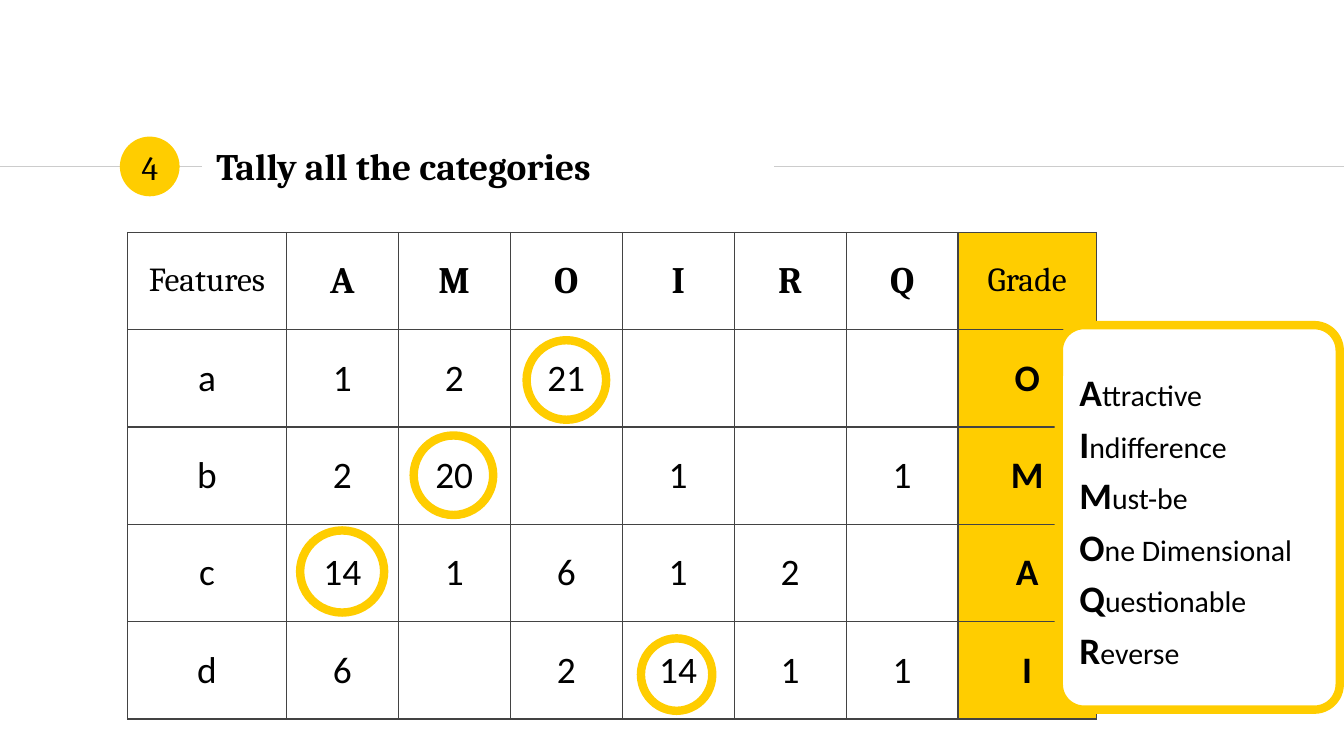
from lxml import etree
from pptx import Presentation
from pptx.dml.color import RGBColor
from pptx.enum.shapes import MSO_CONNECTOR, MSO_SHAPE
from pptx.enum.text import MSO_ANCHOR, PP_ALIGN
from pptx.oxml.ns import qn
from pptx.util import Pt

OVAL, ROUNDED = MSO_SHAPE.OVAL, MSO_SHAPE.ROUNDED_RECTANGLE
STRAIGHT = MSO_CONNECTOR.STRAIGHT
LEFT, CENTER, MIDDLE = PP_ALIGN.LEFT, PP_ALIGN.CENTER, MSO_ANCHOR.MIDDLE

TITLE_ONLY = 5
YELLOW, WHITE, BLACK = "FFCD00", "FFFFFF", "000000"
RULE_GRAY, BORDER_GRAY = "CCCCCC", "434343"
SERIF, SANS = "Cambria", "Calibri"
RULE_Y = 89.3
COLUMN_WIDTHS = [85] + [60] * 6 + [74]
ROW_HEIGHT = 52.15

TALLY = [
    ["Features", "A", "M", "O", "I", "R", "Q", "Grade"],
    ["a", "1", "2", "21", "", "", "", "O"],
    ["b", "2", "20", "", "1", "", "1", "M"],
    ["c", "14", "1", "6", "1", "2", "", "A"],
    ["d", "6", "", "2", "14", "1", "1", "I"],
]
HIGHEST_COUNT_RINGS = [
    (221.6, 233.3, 42.6, 42.6),
    (160.8, 284.2, 45, 44),
    (343.4, 342, 38.2, 38.8),
    (282.1, 182.3, 42.6, 42.6),
]
CATEGORIES = ["Attractive", "Indifference", "Must-be",
              "One Dimensional", "Questionable", "Reverse"]


def color(hex_code):
    return RGBColor.from_string(hex_code)


def points(*lengths):
    return [Pt(length) for length in lengths]


def format_span(span, size, font, bold=False):
    span.font.size = Pt(size)
    span.font.name = font
    span.font.bold = bold
    span.font.color.rgb = color(BLACK)


def set_margins(frame, inset=7.2):
    frame.margin_left = frame.margin_right = Pt(inset)
    frame.margin_top = frame.margin_bottom = Pt(inset)
    frame.vertical_anchor = MIDDLE
    frame.word_wrap = True


def write(frame, text, size, font, bold=False, align=LEFT):
    frame.text = text
    para = frame.paragraphs[0]
    para.alignment = align
    for span in para.runs:
        format_span(span, size, font, bold)


def add_rule(page, start, end):
    rule = page.shapes.add_connector(STRAIGHT, *points(start, RULE_Y, end, RULE_Y))
    rule.line.color.rgb = color(RULE_GRAY)
    rule.line.width = Pt(0.75)
    etree.SubElement(rule._element.spPr, qn("a:effectLst"))


def add_figure(page, preset, area, fill=None, outline=None):
    figure = page.shapes.add_shape(preset, *points(*area))
    figure.shadow.inherit = False
    if fill:
        figure.fill.solid()
        figure.fill.fore_color.rgb = color(fill)
    else:
        figure.fill.background()
    if outline:
        figure.line.color.rgb = color(outline)
        figure.line.width = Pt(4.5)
    else:
        figure.line.fill.background()
    return figure


def add_title(page, text):
    title = page.shapes.title
    title.left, title.top, title.width, title.height = points(108.7, 71.5, 305.3, 34.6)
    set_margins(title.text_frame)
    write(title.text_frame, text, 20, SERIF, bold=True)


def add_step_number(page, text):
    box = page.shapes.add_textbox(*points(65.5, 74.2, 29.5, 31))
    set_margins(box.text_frame)
    write(box.text_frame, text, 18, SERIF, align=CENTER)


def add_borders(cell):
    properties = cell._tc.get_or_add_tcPr()
    for side in ("lnL", "lnR", "lnT", "lnB"):
        border = etree.SubElement(properties, qn("a:" + side), w=str(Pt(0.75)))
        fill = etree.SubElement(border, qn("a:solidFill"))
        etree.SubElement(fill, qn("a:srgbClr"), val=BORDER_GRAY)


def format_cell(cell, text, is_header, is_label, is_grade):
    cell.vertical_anchor = MIDDLE
    cell.margin_left = cell.margin_right = Pt(7.2)
    cell.margin_top = cell.margin_bottom = Pt(5)
    add_borders(cell)
    if is_grade:
        cell.fill.solid()
        cell.fill.fore_color.rgb = color(YELLOW)
    else:
        cell.fill.background()
    is_caption = is_header and (is_label or is_grade)
    write(cell.text_frame, text,
          size=18 if is_caption else 20,
          font=SERIF if is_header else SANS,
          bold=is_header != is_grade and not is_caption,
          align=CENTER)


def add_tally_table(page):
    area = points(68.4, 124.5, sum(COLUMN_WIDTHS), ROW_HEIGHT * len(TALLY))
    table = page.shapes.add_table(len(TALLY), len(COLUMN_WIDTHS), *area).table
    table.first_row = table.horz_banding = False
    for column, width in zip(table.columns, COLUMN_WIDTHS):
        column.width = Pt(width)
    last = len(COLUMN_WIDTHS) - 1
    for r, values in enumerate(TALLY):
        table.rows[r].height = Pt(ROW_HEIGHT)
        for c, value in enumerate(values):
            format_cell(table.cell(r, c), value, r == 0, c == 0, c == last)


def add_legend(page):
    """Card that spells out each category, its initial larger and bold."""
    card = add_figure(page, ROUNDED, (567.2, 174.2, 150.5, 206), WHITE, YELLOW)
    card.adjustments[0] = 0.09
    frame = card.text_frame
    set_margins(frame)
    frame.text = "\n".join(CATEGORIES)
    for para, name in zip(frame.paragraphs, CATEGORIES):
        para.alignment = LEFT
        para.line_spacing = 1.15
        initial, rest = para.runs[0], para.add_run()
        initial.text, rest.text = name[0], name[1:]
        format_span(initial, 20, SANS, bold=True)
        format_span(rest, 16, SANS)


def main():
    deck = Presentation()
    deck.slide_width, deck.slide_height = points(720, 405)
    page = deck.slides.add_slide(deck.slide_layouts[TITLE_ONLY])
    add_rule(page, 0, 108)
    add_figure(page, OVAL, (64.2, 73.2, 32, 32), fill=YELLOW)
    add_rule(page, 414.7, 720)
    add_title(page, "Tally all the categories")
    add_tally_table(page)
    for area in HIGHEST_COUNT_RINGS:
        add_figure(page, OVAL, area, outline=YELLOW)
    add_legend(page)
    add_step_number(page, "4")
    deck.save("out.pptx")


if __name__ == "__main__":
    main()
